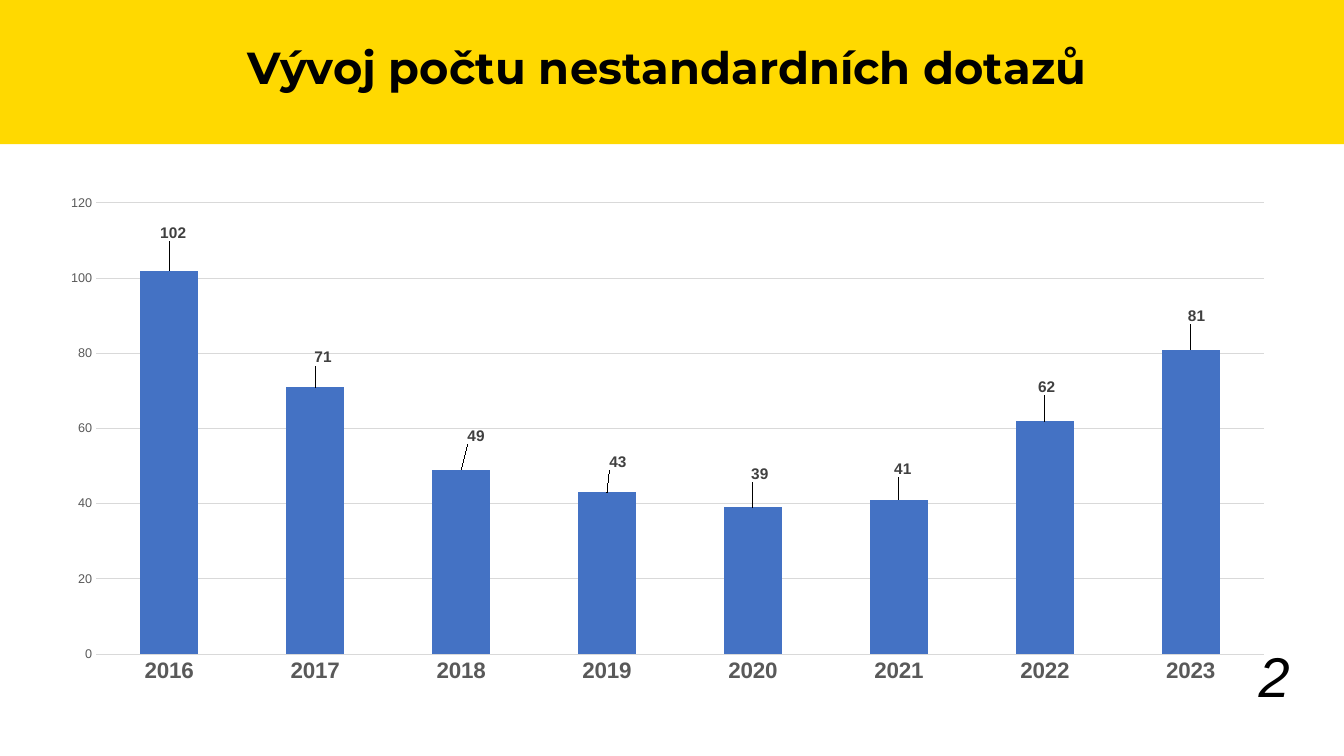
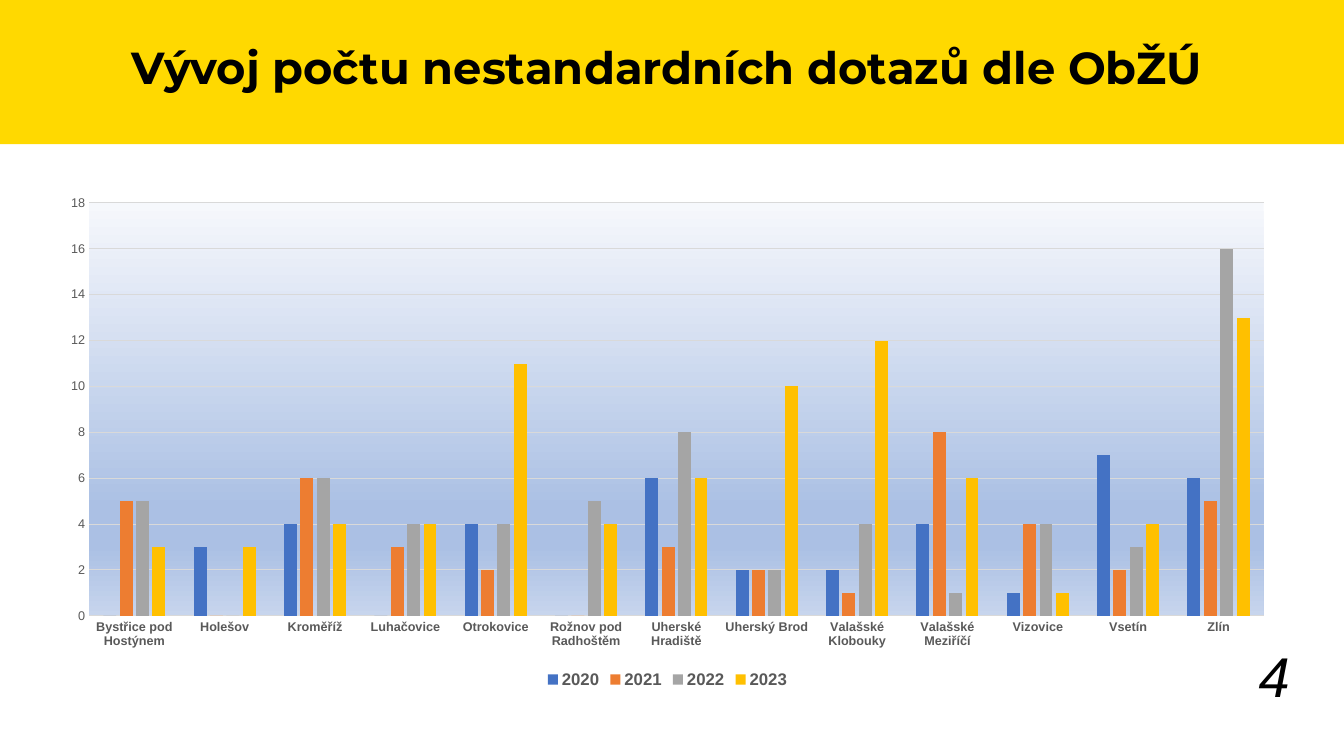
from dataclasses import dataclass

import lxml.etree
import pptx
import pptx.chart.data
import pptx.dml.color
import pptx.enum.chart
import pptx.enum.shapes
import pptx.enum.text
import pptx.oxml
import pptx.oxml.ns
import pptx.util

Inches = pptx.util.Inches
Pt = pptx.util.Pt
qn = pptx.oxml.ns.qn


# Theme: colours, fonts and type sizes
@dataclass(frozen=True)
class Theme:
    band: str = "FFD900"
    ink: str = "000000"
    axis_text: str = "595959"
    label_text: str = "404040"
    grid: str = "D9D9D9"
    series: tuple = ("4472C4", "ED7D31", "A5A5A5", "FFC000")
    plot_gradient: tuple = ((0, "F6F8FC"), (74, "ABC0E4"), (83, "ABC0E4"), (100, "C7D5ED"))
    title_font: str = "Montserrat"
    body_font: str = "Arial"
    title_size: float = 32
    number_size: float = 40
    chart_size: float = 10
    axis_size: float = 9
    year_size: float = 16
    label_size: float = 11
    legend_size: float = 12


WIDTH, HEIGHT = 13.33, 7.5
MARGIN, CONTENT_WIDTH = 0.46, 12.32
CHART_TOP, CHART_HEIGHT = 1.84, 5.03


def rgb(colour):
    return pptx.dml.color.RGBColor.from_string(colour)


class Deck:
    """Holds the theme, the presentation and the slide being built."""

    def __init__(self, theme):
        self.theme = theme
        self.presentation = pptx.Presentation()
        self.presentation.slide_width = Inches(WIDTH)
        self.presentation.slide_height = Inches(HEIGHT)
        self.slide = None

    def style(self, font, size, colour, name=None, bold=False, italic=False):
        font.name = name or self.theme.body_font
        font.size = Pt(size)
        font.bold = bold
        font.italic = italic
        font.color.rgb = rgb(colour)

    # Slide frame
    def new_slide(self, heading, number):
        layout = self.presentation.slide_layouts.get_by_name("Title Only")
        self.slide = self.presentation.slides.add_slide(layout)
        self.band()
        self.title(heading)
        self.page_number(number)

    def band(self):
        band = self.slide.shapes.add_shape(
            pptx.enum.shapes.MSO_SHAPE.RECTANGLE, 0, 0, Inches(WIDTH), Inches(1.43))
        band.shadow.inherit = False
        band.fill.solid()
        band.fill.fore_color.rgb = rgb(self.theme.band)
        band.line.fill.background()
        # The band lies behind the title
        self.slide.shapes.title.element.addprevious(band.element)

    def title(self, heading):
        title = self.slide.shapes.title
        title.left, title.top = Inches(MARGIN), Inches(0.4)
        title.width, title.height = Inches(CONTENT_WIDTH), Inches(1.02)
        frame = title.text_frame
        frame.word_wrap = True
        frame.auto_size = pptx.enum.text.MSO_AUTO_SIZE.NONE
        frame.vertical_anchor = pptx.enum.text.MSO_ANCHOR.TOP
        paragraph = frame.paragraphs[0]
        paragraph.alignment = pptx.enum.text.PP_ALIGN.CENTER
        paragraph.line_spacing = 0.9
        run = paragraph.add_run()
        run.text = heading
        self.style(run.font, self.theme.title_size, self.theme.ink,
                   name=self.theme.title_font, bold=True)

    def page_number(self, number):
        corner = self.slide.shapes.add_textbox(
            Inches(9.89), Inches(6.51), Inches(3), Inches(0.57))
        frame = corner.text_frame
        frame.word_wrap = True
        frame.vertical_anchor = pptx.enum.text.MSO_ANCHOR.BOTTOM
        paragraph = frame.paragraphs[0]
        paragraph.alignment = pptx.enum.text.PP_ALIGN.RIGHT
        run = paragraph.add_run()
        run.text = str(number)
        self.style(run.font, self.theme.number_size, self.theme.ink, italic=True)

    # Charts
    def column_chart(self, categories, series, gap, overlap, top_value, step, category_size):
        data = pptx.chart.data.CategoryChartData()
        data.categories = categories
        for name, values in series.items():
            data.add_series(name, values)
        chart = self.slide.shapes.add_chart(
            pptx.enum.chart.XL_CHART_TYPE.COLUMN_CLUSTERED,
            Inches(MARGIN), Inches(CHART_TOP),
            Inches(CONTENT_WIDTH), Inches(CHART_HEIGHT), data).chart
        chart.has_title = False
        chart.has_legend = False
        self.style(chart.font, self.theme.chart_size, self.theme.ink)

        columns = chart.plots[0]
        columns.vary_by_categories = False
        columns.gap_width = gap
        columns.overlap = overlap
        for group, colour in zip(columns.series, self.theme.series):
            group.format.fill.solid()
            group.format.fill.fore_color.rgb = rgb(colour)

        for axis, size, bold in ((chart.category_axis, category_size, True),
                                 (chart.value_axis, self.theme.axis_size, False)):
            axis.major_tick_mark = pptx.enum.chart.XL_TICK_MARK.NONE
            axis.minor_tick_mark = pptx.enum.chart.XL_TICK_MARK.NONE
            axis.format.line.fill.background()
            self.style(axis.tick_labels.font, size, self.theme.axis_text, bold=bold)
        scale = chart.value_axis
        scale.minimum_scale, scale.maximum_scale, scale.major_unit = 0, top_value, step
        scale.has_major_gridlines = True
        self.hairline(scale.major_gridlines)
        return chart

    def hairline(self, part):
        part.format.line.color.rgb = rgb(self.theme.grid)
        part.format.line.width = Pt(0.75)

    def value_labels(self, chart, shifts):
        """Label each column, moved right and up by the given inches."""
        points = chart.plots[0].series[0].points
        for index in range(len(shifts)):
            label = points[index].data_label
            self.style(label.font, self.theme.label_size, self.theme.label_text, bold=True)
            label.position = pptx.enum.chart.XL_LABEL_POSITION.OUTSIDE_END
        for label, (right, up) in zip(chart.element.iter(qn("c:dLbl")), shifts):
            layout = pptx.oxml.parse_xml(
                f'<c:layout {pptx.oxml.ns.nsdecls("c")}><c:manualLayout>'
                f'<c:x val="{right / CONTENT_WIDTH}"/><c:y val="{-up / CHART_HEIGHT}"/>'
                '</c:manualLayout></c:layout>')
            label.find(qn("c:idx")).addnext(layout)

    def legend(self, chart):
        chart.has_legend = True
        chart.legend.position = pptx.enum.chart.XL_LEGEND_POSITION.BOTTOM
        chart.legend.include_in_layout = False
        self.style(chart.legend.font, self.theme.legend_size, self.theme.axis_text, bold=True)

    def plot_background(self, chart):
        plot_area = next(chart.element.iter(qn("c:plotArea")))
        properties = lxml.etree.SubElement(plot_area, qn("c:spPr"))
        gradient = lxml.etree.SubElement(properties, qn("a:gradFill"))
        stops = lxml.etree.SubElement(gradient, qn("a:gsLst"))
        for percent, colour in self.theme.plot_gradient:
            stop = lxml.etree.SubElement(stops, qn("a:gs"), pos=str(percent * 1000))
            lxml.etree.SubElement(stop, qn("a:srgbClr"), val=colour)
        lxml.etree.SubElement(gradient, qn("a:lin"), ang=str(90 * 60000), scaled="0")


# Content
YEARLY_QUERIES = {
    "2016": 102, "2017": 71, "2018": 49, "2019": 43,
    "2020": 39, "2021": 41, "2022": 62, "2023": 81,
}
LABEL_SHIFTS = (
    (0.04, 0.25), (0.08, 0.17), (0.15, 0.21), (0.11, 0.18),
    (0.07, 0.21), (0.04, 0.18), (0.02, 0.21), (0.06, 0.21),
)
OFFICE_YEARS = ("2020", "2021", "2022", "2023")
OFFICE_QUERIES = {
    "Bystřice pod Hostýnem": (0, 5, 5, 3),
    "Holešov": (3, 0, 0, 3),
    "Kroměříž": (4, 6, 6, 4),
    "Luhačovice": (0, 3, 4, 4),
    "Otrokovice": (4, 2, 4, 11),
    "Rožnov pod Radhoštěm": (0, 0, 5, 4),
    "Uherské Hradiště": (6, 3, 8, 6),
    "Uherský Brod": (2, 2, 2, 10),
    "Valašské Klobouky": (2, 1, 4, 12),
    "Valašské Meziříčí": (4, 8, 1, 6),
    "Vizovice": (1, 4, 4, 1),
    "Vsetín": (7, 2, 3, 4),
    "Zlín": (6, 5, 16, 13),
}


def main():
    deck = Deck(Theme())

    # Queries by year
    deck.new_slide("Vývoj počtu nestandardních dotazů", 2)
    by_year = deck.column_chart(
        list(YEARLY_QUERIES), {"Series 1": list(YEARLY_QUERIES.values())},
        gap=150, overlap=0, top_value=120, step=20, category_size=deck.theme.year_size)
    deck.value_labels(by_year, LABEL_SHIFTS)

    # Queries by trade licensing office
    deck.new_slide("Vývoj počtu nestandardních dotazů dle ObŽÚ", 4)
    by_office = deck.column_chart(
        list(OFFICE_QUERIES), dict(zip(OFFICE_YEARS, zip(*OFFICE_QUERIES.values()))),
        gap=219, overlap=-27, top_value=18, step=2, category_size=deck.theme.axis_size)
    deck.hairline(by_office.category_axis)
    deck.legend(by_office)
    deck.plot_background(by_office)

    deck.presentation.save("out.pptx")


if __name__ == "__main__":
    main()
